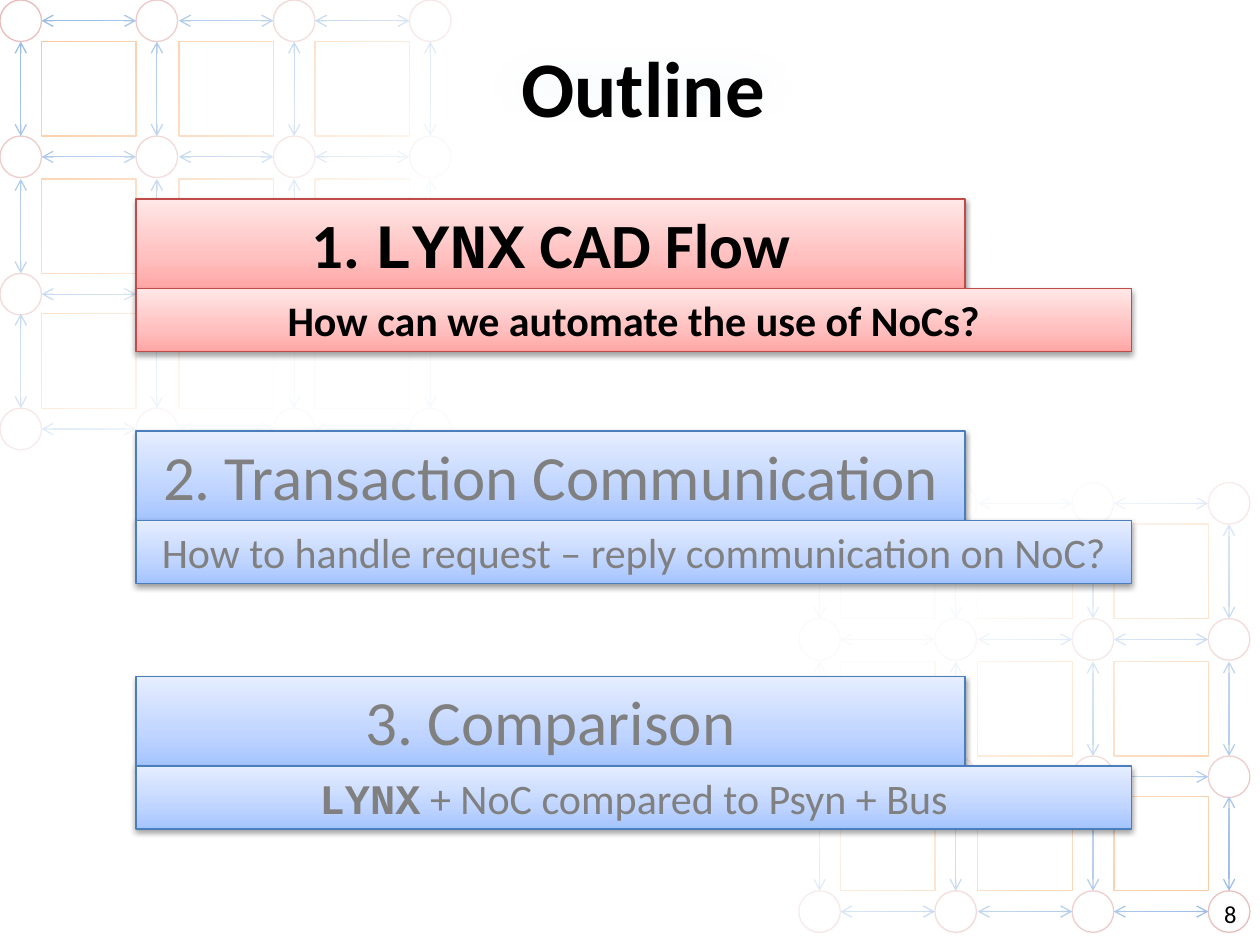
from typing import NamedTuple

import pptx
import pptx.dml.color
import pptx.enum.shapes
import pptx.enum.text
import pptx.oxml
import pptx.oxml.ns
import pptx.util
from pptx.dml.color import RGBColor
from pptx.enum.shapes import MSO_CONNECTOR, MSO_SHAPE
from pptx.enum.text import MSO_ANCHOR, MSO_AUTO_SIZE, PP_ALIGN
from pptx.util import Inches, Pt

BLACK = RGBColor(0x00, 0x00, 0x00)
WHITE = RGBColor(0xFF, 0xFF, 0xFF)
GREY = RGBColor(0x80, 0x80, 0x80)
TILE_ORANGE = RGBColor(0xFA, 0xC0, 0x90)
NODE_PINK = RGBColor(0xE6, 0xB9, 0xB8)
LINK_BLUE = RGBColor(0x8E, 0xB4, 0xE3)
TITLE_BLUE = RGBColor(0xC6, 0xD9, 0xF1)
RED_LINE = RGBColor(0xBF, 0x4C, 0x48)
BLUE_LINE = RGBColor(0x4B, 0x7E, 0xBC)

NODE = 0.33
TILE = 0.75
COLUMNS = (0, 1.08, 2.17, 3.25)
ROWS = (0, 1.08, 2.17, 3.24)


class Stop(NamedTuple):
    position: int
    color: RGBColor
    opacity: int = 100


class Theme(NamedTuple):
    stops: tuple[Stop, ...]
    line: RGBColor
    text: RGBColor
    bold: bool


class Run(NamedTuple):
    text: str
    font: str = "Calibri"
    bold: bool | None = None


class Section(NamedTuple):
    top: float
    heading: tuple[Run, ...]
    question: tuple[Run, ...]
    theme: Theme


FADE = (Stop(0, WHITE, 0), Stop(66, WHITE, 93))
CURRENT = Theme(
    (Stop(0, RGBColor(0xFF, 0xA6, 0xA5)), Stop(35, RGBColor(0xFF, 0xC0, 0xBF)),
     Stop(100, RGBColor(0xFF, 0xE7, 0xE7))), RED_LINE, BLACK, True)
UPCOMING = Theme(
    (Stop(0, RGBColor(0xA4, 0xC4, 0xFF)), Stop(35, RGBColor(0xBF, 0xD4, 0xFF)),
     Stop(100, RGBColor(0xE6, 0xEE, 0xFF))), BLUE_LINE, GREY, False)
LYNX = Run("LYNX", "Courier New", True)

SECTIONS = (
    Section(1.58, (Run("1. "), LYNX, Run(" CAD Flow")),
            (Run("How can we automate the use of NoCs?"),), CURRENT),
    Section(3.42, (Run("2. Transaction Communication"),),
            (Run("How to handle request – reply communication on NoC?"),), UPCOMING),
    Section(5.37, (Run("3. Comparison"),),
            (LYNX, Run(" + NoC compared to Psyn + Bus")), UPCOMING),
)


def drawing_element(xml: str):
    """Parse XML whose outer tag takes the DrawingML namespace."""
    tag, rest = xml.split(" ", 1)
    return pptx.oxml.parse_xml(f"{tag} {pptx.oxml.ns.nsdecls('a')} {rest}")


def add_shape(slide, kind: MSO_SHAPE, left: float, top: float, width: float, height: float,
              line: RGBColor | None = None):
    """Add an unfilled, shadowless shape."""
    shape = slide.shapes.add_shape(
        kind, Inches(left), Inches(top), Inches(width), Inches(height))
    shape.shadow.inherit = False
    shape.fill.background()
    if line is None:
        shape.line.fill.background()
    else:
        shape.line.color.rgb = line
        shape.line.width = Pt(0.75)
    return shape


def add_effect(shape, xml: str) -> None:
    shape._element.spPr.find(pptx.oxml.ns.qn("a:effectLst")).append(drawing_element(xml))


def fill_gradient(shape, stops: tuple[Stop, ...], angle: int) -> None:
    stop_xml = "".join(
        f'<a:gs pos="{stop.position * 1000}"><a:srgbClr val="{stop.color}">'
        f'<a:alpha val="{stop.opacity * 1000}"/></a:srgbClr></a:gs>' for stop in stops)
    properties = shape._element.spPr
    properties.replace(
        properties.find(pptx.oxml.ns.qn("a:noFill")),
        drawing_element(f'<a:gradFill rotWithShape="1"><a:gsLst>{stop_xml}</a:gsLst>'
                        f'<a:lin ang="{angle * 60000}" scaled="0"/></a:gradFill>'))


def add_link(slide, x1: float, y1: float, x2: float, y2: float) -> None:
    """Add a double-headed arrow between two network nodes."""
    link = slide.shapes.add_connector(
        MSO_CONNECTOR.STRAIGHT, Inches(x1), Inches(y1), Inches(x2), Inches(y2))
    link.line.color.rgb = LINK_BLUE
    link.line.width = Pt(0.75)
    for end in ("headEnd", "tailEnd"):
        link.line._get_or_add_ln().append(drawing_element(f'<a:{end} type="arrow"/>'))
    link._element.spPr.append(drawing_element("<a:effectLst />"))


def add_network(slide, left: float, top: float) -> None:
    """Draw a four by four mesh of nodes, with tiles between them."""
    xs = [left + column for column in COLUMNS]
    ys = [top + row for row in ROWS]
    for x in xs[1:]:
        for y in ys[1:]:
            add_shape(slide, MSO_SHAPE.RECTANGLE, x - TILE, y - TILE, TILE, TILE, TILE_ORANGE)
    for x in xs:
        for y in ys:
            node = add_shape(slide, MSO_SHAPE.OVAL, x, y, NODE, NODE, NODE_PINK)
            node.fill.solid()
            node.fill.fore_color.rgb = WHITE
            center_x, center_y = x + NODE / 2, y + NODE / 2
            if x > left:
                add_link(slide, x - TILE, center_y, x, center_y)
            if y > top:
                add_link(slide, center_x, y, center_x, y - TILE)


def add_fade(slide, left: float, top: float, width: float, height: float,
             rotation: int = 0) -> None:
    fade = add_shape(slide, MSO_SHAPE.RECTANGLE, left, top, width, height)
    fill_gradient(fade, FADE, 45)
    fade.rotation = rotation


def write(shape, runs: tuple[Run, ...], size: int, color: RGBColor, bold: bool,
          anchor: MSO_ANCHOR) -> None:
    frame = shape.text_frame
    frame.word_wrap = True
    frame.vertical_anchor = anchor
    paragraph = frame.paragraphs[0]
    paragraph.alignment = PP_ALIGN.CENTER
    paragraph.font.size = Pt(size)
    paragraph.font.color.rgb = color
    paragraph.font.bold = bold
    for part in runs:
        run = paragraph.add_run()
        run.text = part.text
        run.font.name = part.font
        run.font.bold = part.bold


def add_bar(slide, top: float, width: float, height: float, runs: tuple[Run, ...],
            size: int, theme: Theme) -> None:
    bar = add_shape(slide, MSO_SHAPE.RECTANGLE, 1.08, top, width, height, theme.line)
    fill_gradient(bar, theme.stops, 270)
    add_effect(bar, '<a:outerShdw blurRad="40000" dist="20000" dir="5400000" rotWithShape="0">'
                    '<a:srgbClr val="000000"><a:alpha val="38000"/></a:srgbClr></a:outerShdw>')
    write(bar, runs, size, theme.text, theme.bold, MSO_ANCHOR.TOP)
    bar.text_frame.auto_size = MSO_AUTO_SIZE.SHAPE_TO_FIT_TEXT


def add_title(slide) -> None:
    title = add_shape(slide, MSO_SHAPE.RECTANGLE, 3.53, 0.13, 3.15, 1.1)
    title.fill.solid()
    title.fill.fore_color.rgb = TITLE_BLUE
    title.fill._xPr.find(".//" + pptx.oxml.ns.qn("a:srgbClr")).append(
        drawing_element('<a:alpha val="15000"/>'))
    add_effect(title, '<a:softEdge rad="317500"/>')
    write(title, (Run("Outline"),), 45, BLACK, True, MSO_ANCHOR.MIDDLE)


def main() -> None:
    deck = pptx.Presentation()
    deck.slide_width, deck.slide_height = Inches(10), Inches(7.5)
    slide = deck.slides.add_slide(deck.slide_layouts[6])

    add_network(slide, 0, 0)
    add_fade(slide, 0, 0, 3.66, 3.67)
    add_network(slide, 6.34, 3.83)
    add_fade(slide, 6.25, 3.67, 3.75, 3.83, rotation=180)

    add_title(slide)
    page_number = slide.shapes.add_textbox(Inches(9.55), Inches(7.05), Inches(0.43), Inches(0.4))
    write(page_number, (Run("8"),), 14, BLACK, False, MSO_ANCHOR.MIDDLE)

    for section in SECTIONS:
        add_bar(slide, section.top, 6.58, 0.71, section.heading, 36, section.theme)
        add_bar(slide, section.top + 0.71, 7.9, 0.5, section.question, 24, section.theme)
    deck.save("out.pptx")


if __name__ == "__main__":
    main()
